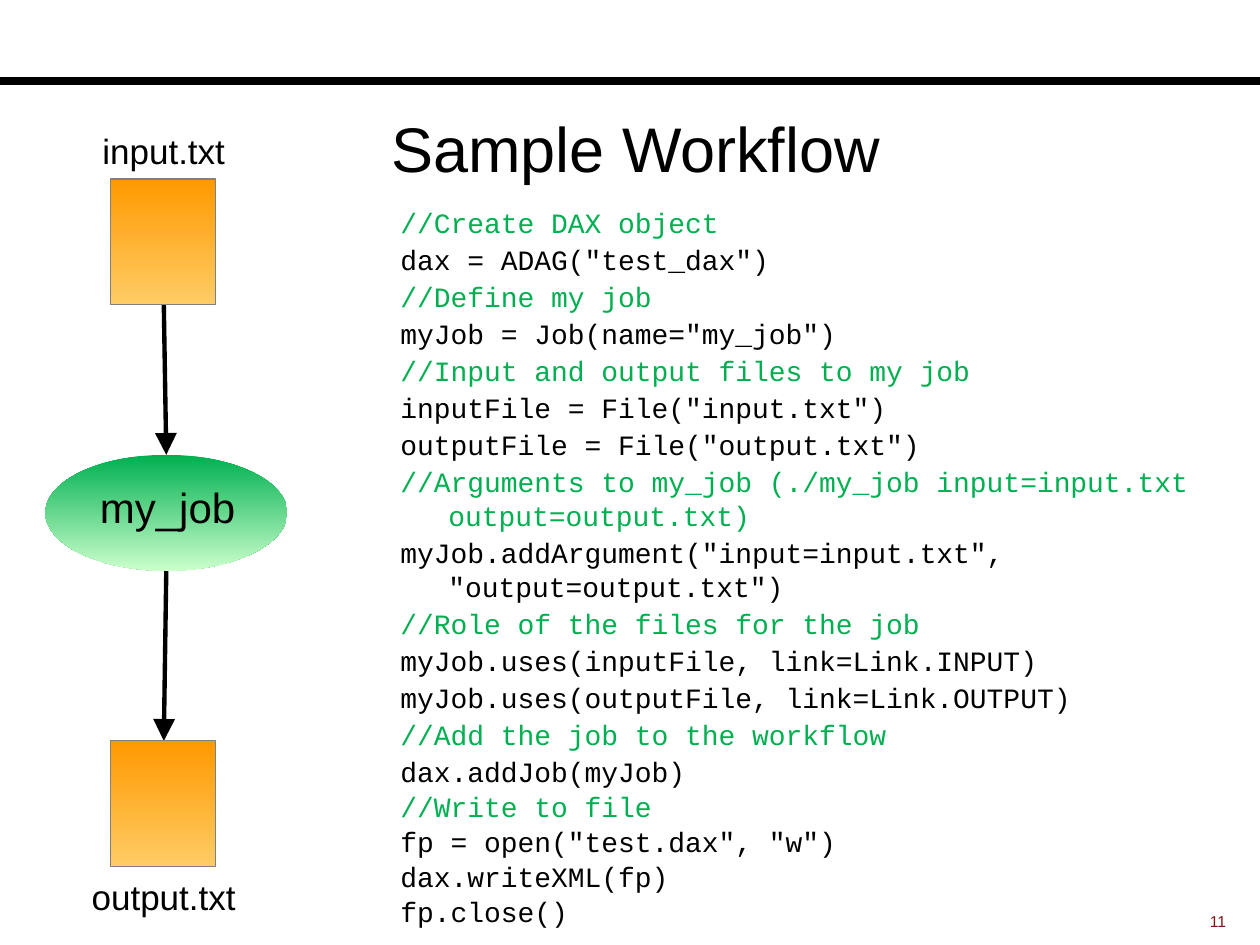
from dataclasses import dataclass

from pptx import Presentation
from pptx.dml.color import RGBColor
from pptx.enum.shapes import MSO_CONNECTOR, MSO_SHAPE
from pptx.enum.text import MSO_ANCHOR, PP_ALIGN
from pptx.oxml.ns import qn
from pptx.util import Inches, Pt
from lxml.etree import SubElement

COLORS = {
    "black": "000000", "green": "00B050", "mint": "CCFFCC", "orange": "FF9900",
    "amber": "FFCC66", "gray": "808080", "red": "82151A",
}
CODE = """//Create DAX object
dax = ADAG("test_dax")
//Define my job
myJob = Job(name="my_job")
//Input and output files to my job
inputFile = File("input.txt")
outputFile = File("output.txt")
//Arguments to my_job (./my_job input=input.txt output=output.txt)
myJob.addArgument("input=input.txt", "output=output.txt")
//Role of the files for the job
myJob.uses(inputFile, link=Link.INPUT)
myJob.uses(outputFile, link=Link.OUTPUT)
//Add the job to the workflow
dax.addJob(myJob)
//Write to file
fp = open("test.dax", "w")
dax.writeXML(fp)
fp.close()""".split("\n")
TIGHT = CODE.index("//Write to file")


@dataclass
class Box:
    left: float
    top: float
    width: float
    height: float

    def place(self) -> list:
        return [Inches(n) for n in (self.left, self.top, self.width, self.height)]


@dataclass
class Node:
    kind: MSO_SHAPE
    box: Box
    shades: tuple
    edge: str = ""


@dataclass
class Line:
    start: tuple
    end: tuple
    width: float
    arrow: bool = True


NODES = [
    Node(MSO_SHAPE.OVAL, Box(0.36, 3.61, 1.92, 0.92), ("green", "mint")),
    *(Node(MSO_SHAPE.RECTANGLE, Box(0.88, top, 0.83, 1), ("orange", "amber"), "gray")
      for top in (1.42, 5.88)),
]
LINES = [
    Line((0, 0.64), (10, 0.64), 4.5, arrow=False),
    Line((1.3, 2.42), (1.32, 3.61), 2.5),
    Line((1.32, 4.53), (1.3, 5.88), 2.5),
]


def rgb(name: str) -> RGBColor:
    return RGBColor.from_string(COLORS[name])


def add_text(slide, text: str, box: Box, size: float, color="black", font="Arial",
             align=PP_ALIGN.CENTER, anchor=MSO_ANCHOR.TOP):
    frame = slide.shapes.add_textbox(*box.place()).text_frame
    frame.word_wrap = True
    frame.vertical_anchor = anchor
    frame.text = text
    for para in frame.paragraphs:
        para.alignment = align
        para.font.size = Pt(size)
        para.font.name = font
        para.font.color.rgb = rgb(color)
    return frame


def add_code(slide) -> None:
    """Add the listing with green comments and hanging indents."""
    frame = add_text(slide, "\n".join(CODE), Box(3.08, 1.58, 6.92, 5.94), 16,
                     font="Courier New", align=PP_ALIGN.LEFT)
    for i, para in enumerate(frame.paragraphs):
        props = para._p.get_or_add_pPr()
        props.set("marL", str(Inches(0.38)))
        props.set("indent", str(-Inches(0.38)))
        para.space_before = Pt(2 if i else 0)
        if i >= TIGHT:
            para.line_spacing = Pt(18)
        if para.text.startswith("//"):
            para.font.color.rgb = rgb("green")


def add_node(slide, node: Node) -> None:
    shape = slide.shapes.add_shape(node.kind, *node.box.place())
    shape.shadow.inherit = False
    shape.fill.gradient()
    shape.fill.gradient_angle = 270
    for stop, shade, spot in zip(shape.fill.gradient_stops, node.shades, (0, 1)):
        stop.color.rgb = rgb(shade)
        stop.position = spot
    if node.edge:
        shape.line.color.rgb = rgb(node.edge)
        shape.line.width = Pt(0.75)
    else:
        shape.line.fill.background()


def add_line(slide, line: Line) -> None:
    ends = [Inches(n) for n in (*line.start, *line.end)]
    wire = slide.shapes.add_connector(MSO_CONNECTOR.STRAIGHT, *ends)
    wire.line.color.rgb = rgb("black")
    wire.line.width = Pt(line.width)
    if line.arrow:
        SubElement(wire.line._get_or_add_ln(), qn("a:tailEnd"),
                   type="triangle", w="lg", len="lg")
    SubElement(wire._element.spPr, qn("a:effectLst"))


def main() -> None:
    deck = Presentation()
    deck.slide_width, deck.slide_height = Inches(10), Inches(7.5)
    slide = deck.slides.add_slide(deck.slide_layouts[6])
    for line in LINES:
        add_line(slide, line)
    for node in NODES:
        add_node(slide, node)
    add_text(slide, "Sample Workflow", Box(0.17, 0.67, 9.75, 1), 36,
             anchor=MSO_ANCHOR.MIDDLE)
    add_text(slide, "my_job", Box(0.33, 3.77, 2, 0.5), 24)
    add_text(slide, "input.txt", Box(0.55, 0.98, 1.5, 0.44), 20)
    add_text(slide, "output.txt", Box(0.3, 6.9, 2, 0.44), 20)
    add_code(slide)
    add_text(slide, "11", Box(8.75, 7.19, 1.08, 0.25), 9, color="red",
             align=PP_ALIGN.RIGHT)
    deck.save("out.pptx")


if __name__ == "__main__":
    main()
